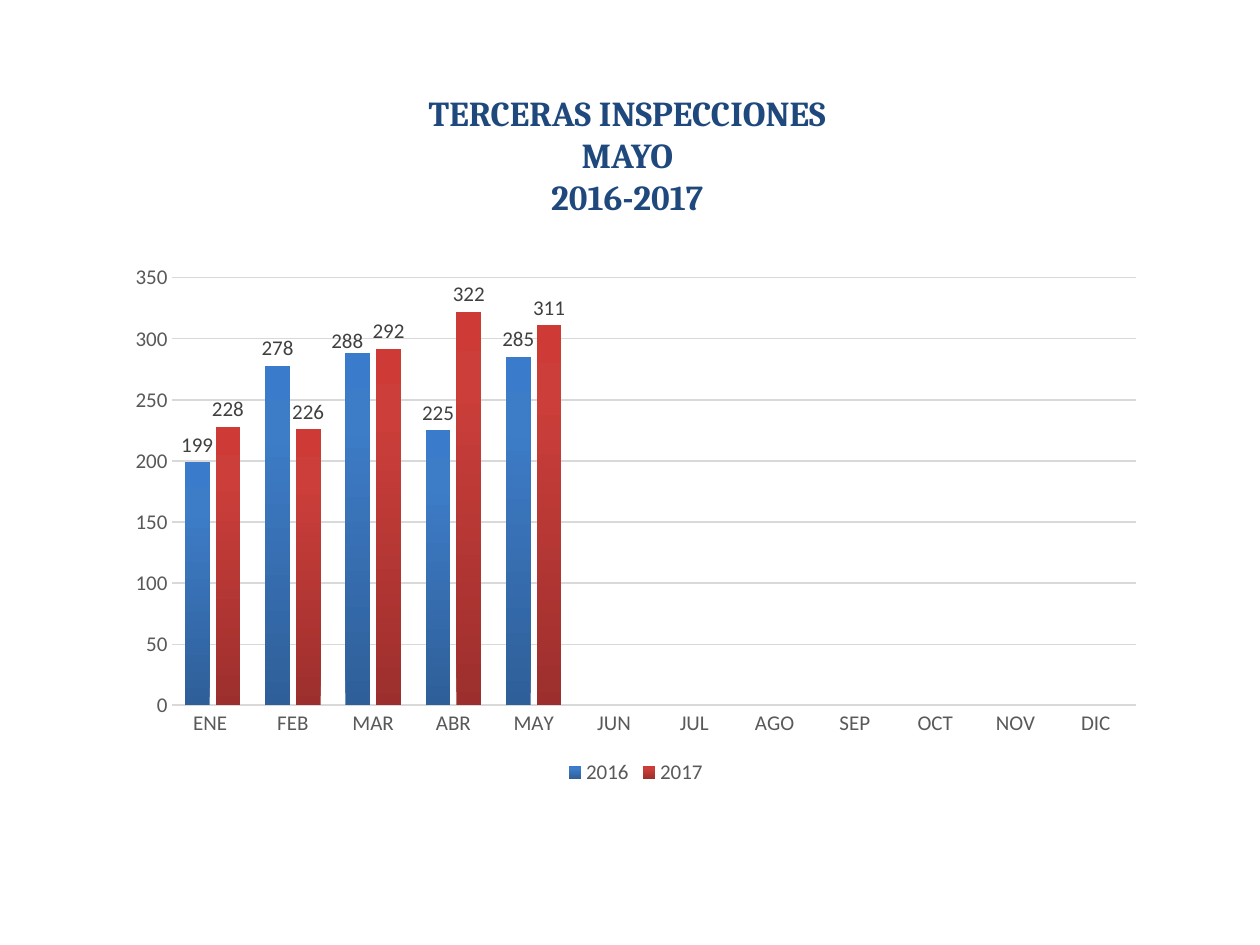
from lxml import etree
from pptx import Presentation
from pptx import util as u
from pptx.chart.data import CategoryChartData
from pptx.dml.color import RGBColor
from pptx.enum import chart as ch, text as t
from pptx.oxml import parse_xml
from pptx.oxml.ns import nsdecls, qn

COLORS = {"title": "1F497D", "axis": "595959", "grid": "D9D9D9", "label": "404040"}
GRADIENTS = {
    "2016": [(0, "2F5F99"), (80, "3D7CC7"), (100, "3A7CCB")],
    "2017": [(0, "9C2F2D"), (80, "CB3E3A"), (100, "CE3B37")],
}
MONTHS = ["ENE ", "FEB", "MAR", "ABR", "MAY", "JUN",
          "JUL", "AGO", "SEP", "OCT", "NOV", "DIC"]
INSPECTIONS = {
    "2016": [199, 278, 288, 225, 285],
    "2017": [228, 226, 292, 322, 311],
}


def apply(target, values):
    for name, value in values.items():
        setattr(target, name, value)


class SlideBuilder:
    def __init__(self, slide):
        self.slide = slide

    def style_font(self, font, color, size=12, name="Calibri", bold=False):
        apply(font, {"size": u.Pt(size), "name": name, "bold": bold})
        font.color.rgb = RGBColor.from_string(COLORS[color])

    def style_line(self, line, color, width):
        line.color.rgb = RGBColor.from_string(COLORS[color])
        line.width = u.Pt(width)

    def title(self, box, lines):
        frame = self.slide.shapes.add_textbox(*map(u.Pt, box)).text_frame
        apply(frame, {"word_wrap": True, "auto_size": t.MSO_AUTO_SIZE.SHAPE_TO_FIT_TEXT,
                      "text": "\n".join(lines)})
        for paragraph in frame.paragraphs:
            paragraph.alignment = t.PP_ALIGN.CENTER
            self.style_font(paragraph.runs[0].font, "title", 20, "Cambria", True)

    def gradient(self, series, stops):
        """Fill the columns with a gradient that rises from the base."""
        stop_xml = "".join(
            f'<a:gs pos="{pos * 1000}"><a:srgbClr val="{color}"/></a:gs>'
            for pos, color in stops)
        series.format.fill.background()
        no_fill = series.format.fill._xPr.find(qn("a:noFill"))
        no_fill.getparent().replace(no_fill, parse_xml(
            f'<a:gradFill {nsdecls("a")} rotWithShape="1"><a:gsLst>{stop_xml}</a:gsLst>'
            '<a:lin ang="16200000" scaled="0"/></a:gradFill>'))

    def labels(self, series):
        apply(series.data_labels, {"show_value": True,
                                   "position": ch.XL_LABEL_POSITION.OUTSIDE_END})
        self.style_font(series.data_labels.font, "label")

    def shift_label(self, series, index, x, y):
        """Move one label by fractions of the chart's width and height."""
        label = series.points[index].data_label
        self.style_font(label.font, "label")
        label.position = ch.XL_LABEL_POSITION.OUTSIDE_END
        point_label = series.data_labels._element.find(qn("c:dLbl"))
        layout = etree.Element(qn("c:layout"))
        manual = etree.SubElement(layout, qn("c:manualLayout"))
        for axis, offset in (("x", x), ("y", y)):
            etree.SubElement(manual, qn(f"c:{axis}")).set("val", str(offset))
        point_label.find(qn("c:idx")).addnext(layout)

    def axes(self, chart):
        for axis in (chart.category_axis, chart.value_axis):
            apply(axis, {"major_tick_mark": ch.XL_TICK_MARK.NONE,
                         "minor_tick_mark": ch.XL_TICK_MARK.NONE})
            self.style_font(axis.tick_labels.font, "axis")
        self.style_line(chart.category_axis.format.line, "grid", 1)
        apply(chart.value_axis, {"minimum_scale": 0, "maximum_scale": 350,
                                 "major_unit": 50, "has_major_gridlines": True})
        chart.value_axis.format.line.fill.background()
        self.style_line(chart.value_axis.major_gridlines.format.line, "grid", 0.75)

    def column_chart(self, box, categories, values):
        data = CategoryChartData()
        data.categories = categories
        for name, counts in values.items():
            data.add_series(name, counts + [None] * (len(categories) - len(counts)))
        chart = self.slide.shapes.add_chart(
            ch.XL_CHART_TYPE.COLUMN_CLUSTERED, *map(u.Pt, box), data).chart
        apply(chart, {"has_title": False, "has_legend": True})
        self.style_font(chart.font, "axis", 10)
        apply(chart.legend, {"position": ch.XL_LEGEND_POSITION.BOTTOM,
                             "include_in_layout": False})
        self.style_font(chart.legend.font, "axis")
        self.axes(chart)
        plot = chart.plots[0]
        apply(plot, {"gap_width": 100, "overlap": -24, "vary_by_categories": False})
        for series in plot.series:
            series.invert_if_negative = False
            self.gradient(series, GRADIENTS[series.name])
            self.labels(series)
        return plot


def main():
    deck = Presentation()
    apply(deck, {"slide_width": u.Pt(720), "slide_height": u.Pt(540)})
    builder = SlideBuilder(deck.slides.add_slide(deck.slide_layouts[6]))
    builder.title((178.5, 49, 360, 80), ["TERCERAS INSPECCIONES", "MAYO", "2016-2017"])
    plot = builder.column_chart((65.5, 145.5, 595.5, 306), MONTHS, INSPECTIONS)
    builder.shift_label(plot.series[0], MONTHS.index("MAR"), -0.01, 0.01)
    deck.save("out.pptx")


if __name__ == "__main__":
    main()
